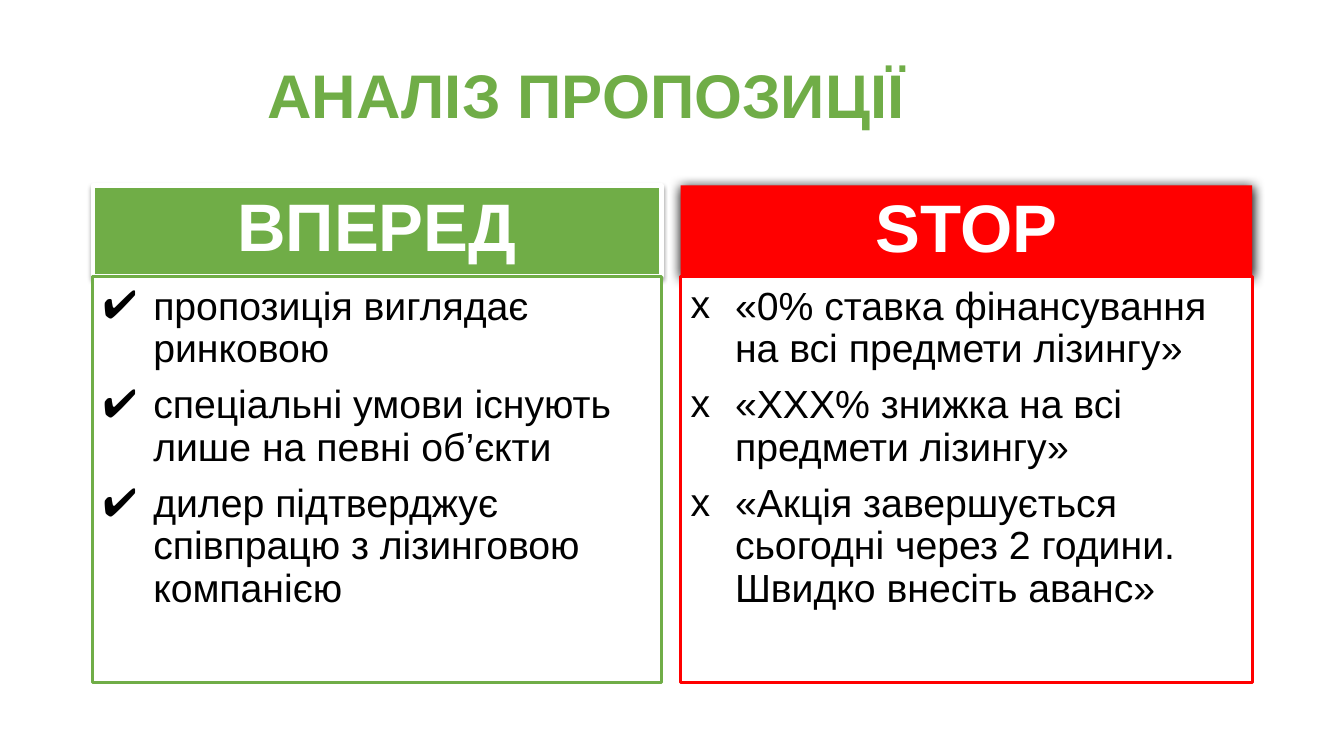
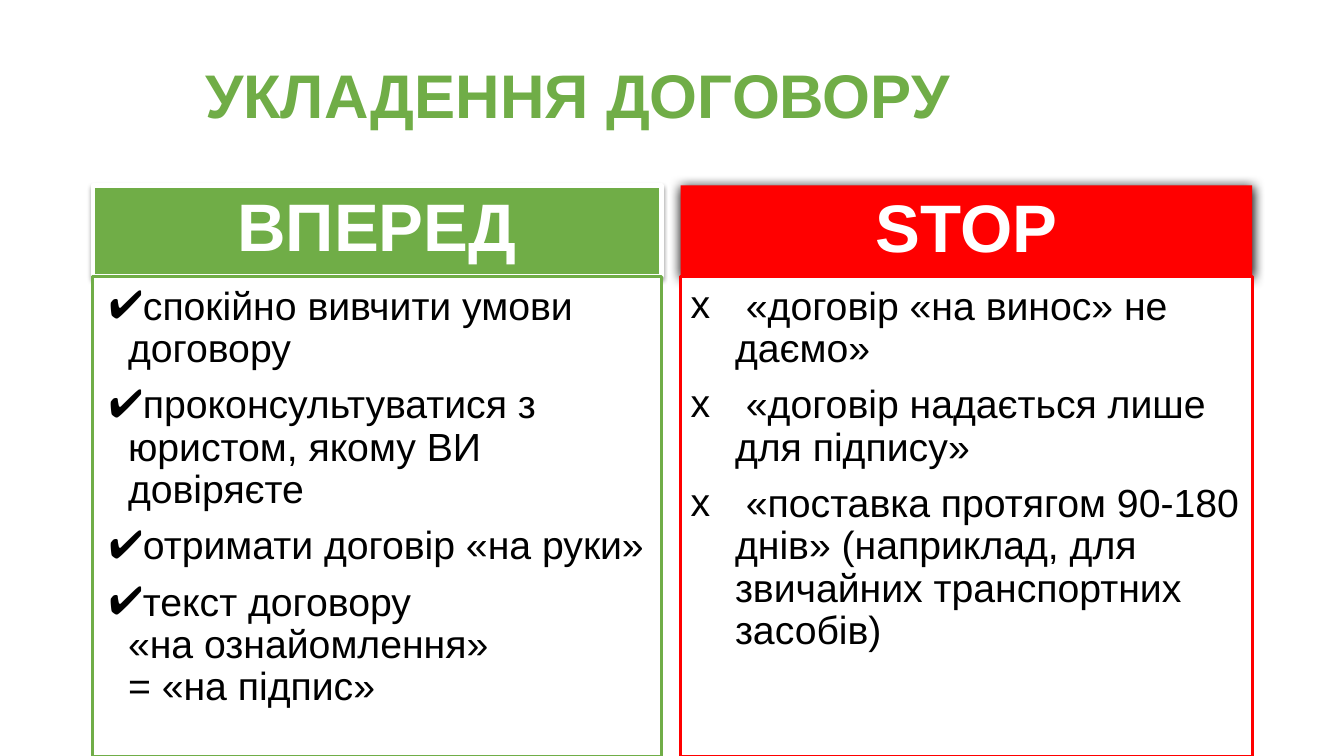
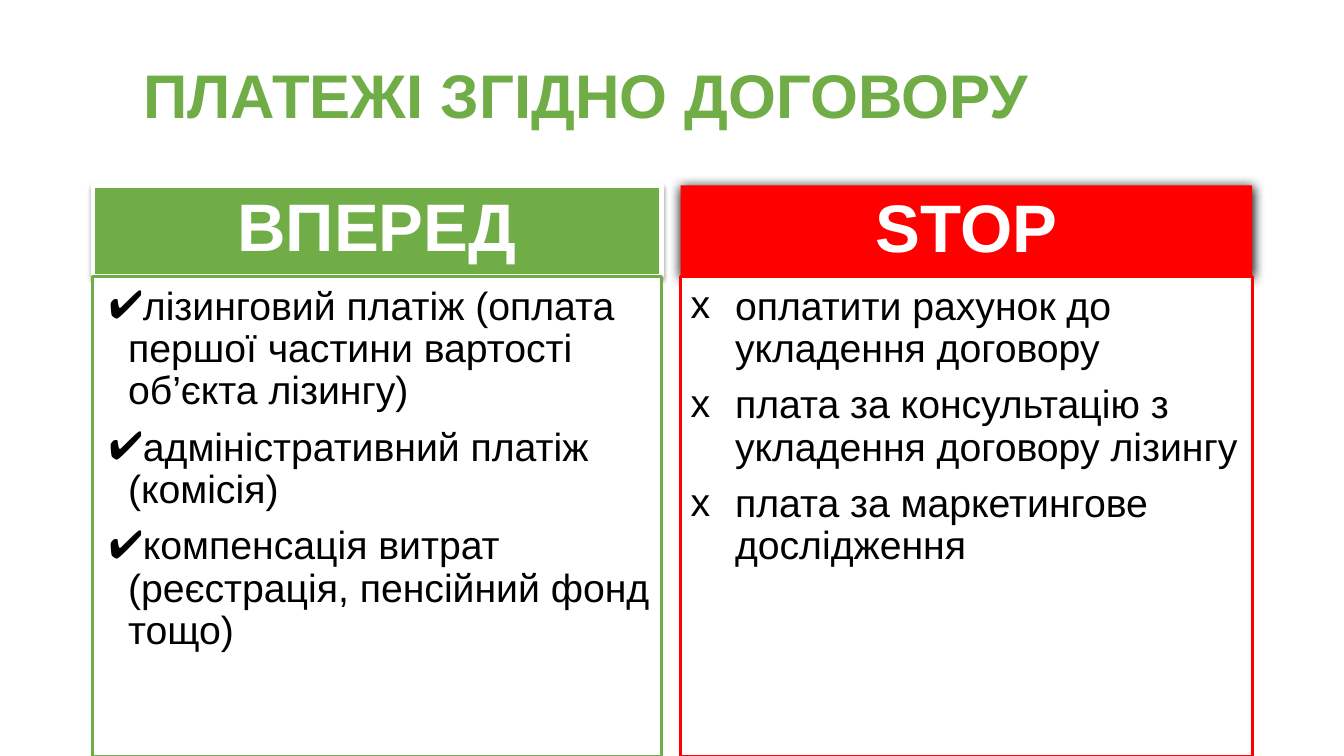
from lxml.etree import SubElement
from pptx import Presentation
from pptx.dml.color import RGBColor
from pptx.enum.text import MSO_ANCHOR, MSO_AUTO_SIZE, PP_ALIGN
from pptx.oxml.ns import qn
from pptx.util import Inches, Pt

INK = {
    "go": "70AD47",
    "stop": "FF0000",
    "white": "FFFFFF",
    "black": "000000",
}
INK = {name: RGBColor.from_string(code) for name, code in INK.items()}

SIDES = [
    dict(name="ВПЕРЕД", tone="go", left=0.92, width=5.64, mark="✔",
         anchor=MSO_ANCHOR.BOTTOM, edge=3, shade=(38, 3.1, 1.6)),
    dict(name="STOP", tone="stop", left=6.75, width=5.67, mark="х",
         anchor=MSO_ANCHOR.MIDDLE, edge=0, shade=(100, 8.5, 1)),
]

PAGES = [
    ("АНАЛІЗ ПРОПОЗИЦІЇ", 4.03, [
        (0.5, 0.5, [
            "пропозиція виглядає ринковою",
            "спеціальні умови існують лише на певні об’єкти",
            "дилер підтверджує співпрацю з лізинговою компанією",
        ]),
        (0.44, 0.44, [
            "«0% ставка фінансування на всі предмети лізингу»",
            "«ХХХ% знижка на всі предмети лізингу»",
            "«Акція завершується сьогодні через 2 години. Швидко внесіть аванс»",
        ]),
    ]),
    ("УКЛАДЕННЯ ДОГОВОРУ ", 4.76, [
        (0.25, 0.19, [
            "спокійно вивчити умови договору",
            "проконсультуватися з юристом, якому ВИ довіряєте",
            "отримати договір «на руки»",
            "текст договору\v«на ознайомлення»\v= «на підпис»",
        ]),
        (0.44, 0.44, [
            " «договір «на винос» не даємо»",
            " «договір надається лише для підпису»",
            " «поставка протягом 90-180 днів» (наприклад, для звичайних "
            "транспортних засобів)",
        ]),
    ]),
    ("ПЛАТЕЖІ ЗГІДНО ДОГОВОРУ", 4.76, [
        (0.25, 0.19, [
            "лізинговий платіж (оплата першої частини вартості об’єкта лізингу)",
            "адміністративний платіж (комісія)",
            "компенсація витрат (реєстрація, пенсійний фонд тощо)",
        ]),
        (0.44, 0.44, [
            "оплатити рахунок до укладення договору",
            "плата за консультацію з укладення договору лізингу",
            "плата за маркетингове дослідження",
        ]),
    ]),
]


def setup(shape, box, anchor):
    shape.left, shape.top, shape.width, shape.height = map(Inches, box)
    frame = shape.text_frame
    frame.word_wrap = True
    frame.auto_size = MSO_AUTO_SIZE.NONE
    frame.vertical_anchor = anchor
    frame.margin_left = frame.margin_right = Inches(0.1)
    frame.margin_top = frame.margin_bottom = Inches(0.1)
    return frame


def style(para, text, size, color, bold=True, align=PP_ALIGN.CENTER, before=0):
    para.text = text
    para.alignment = align
    para.line_spacing = 0.9
    para.space_before = Pt(before)
    para.font.name = "Arial"
    para.font.size = Pt(size)
    para.font.bold = bold
    para.font.color.rgb = INK[color]


deck = Presentation()
deck.slide_width = Inches(13.33)
deck.slide_height = Inches(7.5)

for title, height, lists in PAGES:
    slide = deck.slides.add_slide(deck.slide_layouts.get_by_name("Comparison"))
    holders = slide.placeholders
    frame = setup(holders[0], (0.92, 0.4, 9.79, 1.16), MSO_ANCHOR.MIDDLE)
    style(frame.paragraphs[0], title, 44, "go")

    for num, (side, (margin, hang, items)) in enumerate(zip(SIDES, lists)):
        tone = INK[side["tone"]]
        left, width = side["left"], side["width"]

        head = holders[2 * num + 1]
        frame = setup(head, (left, 1.84, width, 0.9), side["anchor"])
        style(frame.paragraphs[0], side["name"], 48, "white")
        head.fill.solid()
        head.fill.fore_color.rgb = tone
        if side["edge"]:
            head.line.color.rgb = INK["white"]
            head.line.width = Pt(side["edge"])
        else:
            head.line.fill.background()
        alpha, blur, dist = side["shade"]
        head.shadow.inherit = False
        effect = head.element.spPr.find(qn("a:effectLst"))
        shade = SubElement(effect, qn("a:outerShdw"), blurRad=str(Pt(blur)),
                           dist=str(Pt(dist)), dir="5400000", rotWithShape="0")
        color = SubElement(shade, qn("a:srgbClr"), val=str(INK["black"]))
        SubElement(color, qn("a:alpha"), val=str(alpha * 1000))

        body = holders[2 * num + 2]
        frame = setup(body, (left, 2.74, width, height), MSO_ANCHOR.TOP)
        body.fill.solid()
        body.fill.fore_color.rgb = INK["white"]
        body.line.color.rgb = tone
        body.line.width = Pt(2)
        for row, item in enumerate(items):
            para = frame.add_paragraph() if row else frame.paragraphs[0]
            props = para._p.get_or_add_pPr()
            props.set("marL", str(Inches(margin)))
            props.set("indent", str(-Inches(hang)))
            color = SubElement(props, qn("a:buClr"))
            SubElement(color, qn("a:srgbClr"), val=str(INK["black"]))
            SubElement(props, qn("a:buFont"), typeface="Arial")
            SubElement(props, qn("a:buChar"), char=side["mark"])
            style(para, item, 28, "black", False, PP_ALIGN.LEFT, 10 if row else 0)

deck.save("out.pptx")
